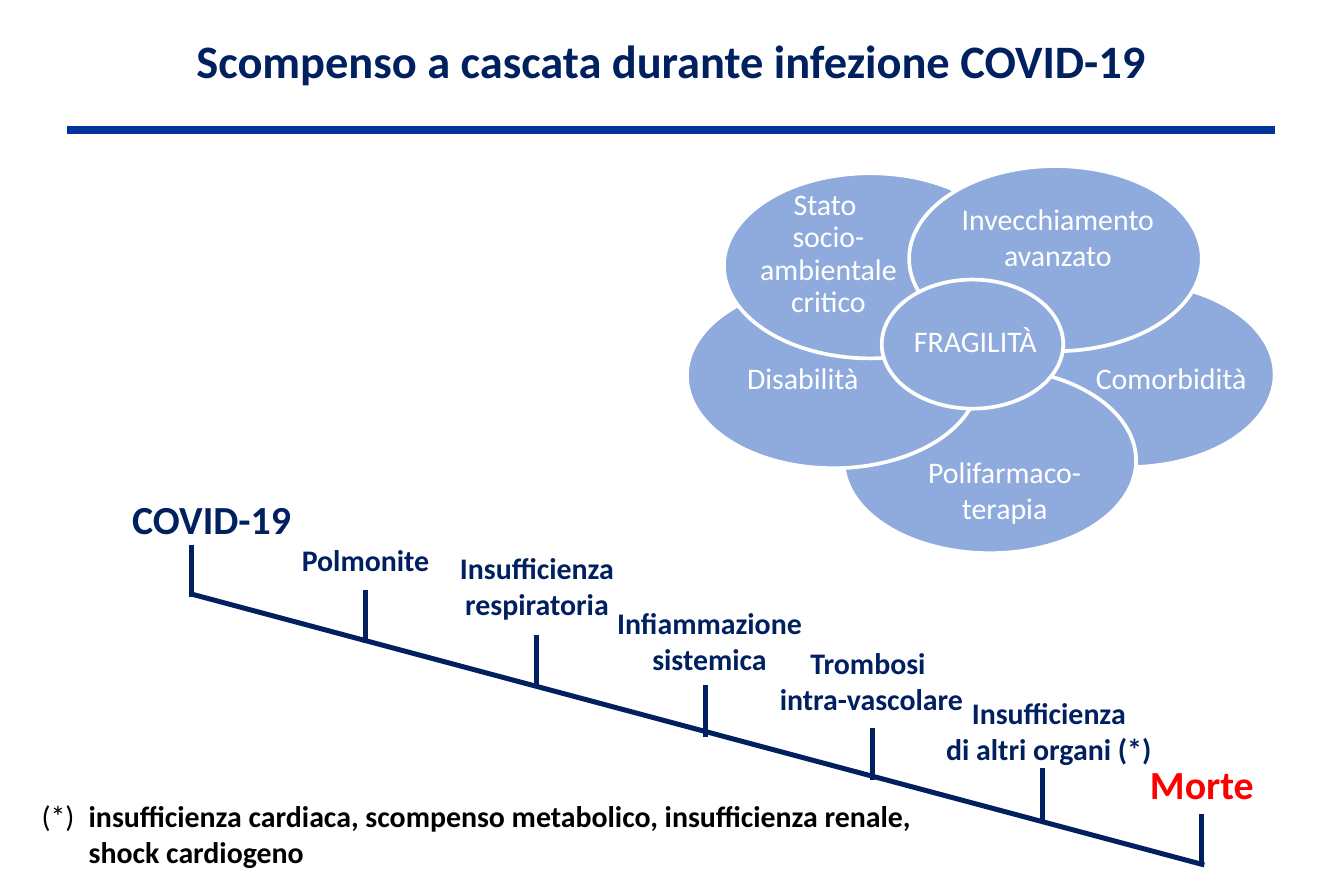
"""Build the slide on cascading decompensation during COVID-19 infection."""
import lxml.etree
import pptx
import pptx.dml.color
import pptx.enum.shapes
import pptx.enum.text
import pptx.oxml
import pptx.oxml.ns
import pptx.util

Pt = pptx.util.Pt
ALIGN = pptx.enum.text.PP_ALIGN
ANCHOR = pptx.enum.text.MSO_ANCHOR

COLORS = {"navy": "002060", "rule": "003399", "petal": "8FAADC",
          "white": "FFFFFF", "red": "FF0000", "black": "000000"}
FORMATS = {
    "title": {"size": Pt(28), "bold": True, "color": "navy"},
    "petal": {"size": Pt(18), "bold": False, "color": "white"},
    "stage": {"size": Pt(18), "bold": True, "color": "navy"},
    "start": {"size": Pt(24), "bold": True, "color": "navy"},
    "end": {"size": Pt(24), "bold": True, "color": "red"},
    "mark": {"size": Pt(18), "bold": False, "color": "black"},
    "note": {"size": Pt(18), "bold": True, "color": "black"},
}

TITLE = "Scompenso a cascata durante infezione COVID-19"
TITLE_BOX = (-0.7, 15.8, 810, 41)
RULE = (40.3, 78.5, 768.2, 78.5)

PETAL_SIZE = (176.4, 111.6)
PETALS = [(591.8, 169.9), (508.3, 221.8), (414, 170.6), (436.3, 104.4), (547.9, 100.1)]
CORE = (531.4, 168.5, 109.4, 77.8)
FACTORS = [
    (["Stato ", "socio-", "ambientale", "critico"], (415.4, 110.9, 167.8, 105.8), 0.9),
    (["Polifarmaco-", "terapia"], (543.6, 270, 123.8, 50.4), 1),
    (["Disabilità"], (400.3, 213.1, 167, 29), 1),
    (["Comorbidità"], (645.8, 213.1, 120.2, 29), 1),
    (["FRAGILITÀ"], (532.8, 190.8, 110.2, 29), 1),
    (["Invecchiamento", "avanzato"], (562.3, 117.4, 150.5, 50.4), 1),
]

SLOPE = (114.5, 357.8, 725.8, 521.3)
TICK = 31.7
STAGES = [
    (["COVID-19"], "start", (56.2, 294.5, 142.6, 36), (115.2, 328.3)),
    (["Polmonite"], "stage", (174.2, 322.6, 92.2, 29), (220.3, 355.7)),
    (["Insufficienza", "respiratoria"], "stage", (269.3, 327.6, 108.7, 51), (323.3, 383)),
    (["Infiammazione", "sistemica"], "stage", (364.3, 360.7, 126.7, 51), (425.5, 412.6)),
    (["Trombosi ", "intra-vascolare"], "stage", (462.2, 385.2, 126, 51), (525.6, 438.5)),
    (["Insufficienza", "di altri organi (*)"], "stage", (562.3, 415.4, 139.7, 51), (628.6, 463)),
    (["Morte"], "end", (685.4, 454.3, 77.8, 36), (724.3, 490.3)),
]

NOTE_MARK = "(*)"
NOTE = ["insufficienza cardiaca, scompenso metabolico, insufficienza renale,",
        "shock cardiogeno"]
NOTE_BOX = (18, 477.4, 544.3, 54)
NOTE_INDENT = 28.4

TEXT_SHADOW = (
    '<a:effectLst %s><a:outerShdw blurRad="38100" dist="38100" dir="2700000" algn="tl">'
    '<a:srgbClr val="000000"><a:alpha val="43000"/></a:srgbClr></a:outerShdw></a:effectLst>'
    % pptx.oxml.ns.nsdecls("a"))


def rgb(name):
    return pptx.dml.color.RGBColor.from_string(COLORS[name])


def add_run(p, text, style):
    r = p.add_run()
    r.text = text
    r.font.name = "Calibri"
    for key, value in FORMATS[style].items():
        if key == "color":
            r.font.color.rgb = rgb(value)
        else:
            setattr(r.font, key, value)
    if style == "petal":
        fill = r.font._element.find(pptx.oxml.ns.qn("a:solidFill"))
        fill.addnext(pptx.oxml.parse_xml(TEXT_SHADOW))
    return r


def add_label(slide, lines, style, box, spacing=1, wrap=False):
    tf = slide.shapes.add_textbox(*map(Pt, box)).text_frame
    tf.word_wrap = wrap
    for i, line in enumerate(lines):
        p = tf.add_paragraph() if i else tf.paragraphs[0]
        p.alignment = ALIGN.CENTER
        p.line_spacing = spacing
        add_run(p, line, style)


def add_ellipse(slide, box):
    sp = slide.shapes.add_shape(pptx.enum.shapes.MSO_SHAPE.OVAL, *map(Pt, box))
    sp.shadow.inherit = False
    sp.fill.solid()
    sp.fill.fore_color.rgb = rgb("petal")
    sp.line.color.rgb = rgb("white")
    sp.line.width = Pt(2.25)


def add_line(slide, ends, color, width):
    line = slide.shapes.add_connector(pptx.enum.shapes.MSO_CONNECTOR.STRAIGHT, *map(Pt, ends))
    line.line.color.rgb = rgb(color)
    line.line.width = Pt(width)
    lxml.etree.SubElement(line._element.spPr, pptx.oxml.ns.qn("a:effectLst"))


def add_title(slide):
    title = slide.shapes.title
    title.left, title.top, title.width, title.height = map(Pt, TITLE_BOX)
    tf = title.text_frame
    tf.auto_size = pptx.enum.text.MSO_AUTO_SIZE.NONE
    tf.vertical_anchor = ANCHOR.MIDDLE
    tf.paragraphs[0].alignment = ALIGN.CENTER
    add_run(tf.paragraphs[0], TITLE, "title")


def add_note(slide):
    tf = slide.shapes.add_textbox(*map(Pt, NOTE_BOX)).text_frame
    tf.word_wrap = False
    p = tf.paragraphs[0]
    pPr = p._p.get_or_add_pPr()
    pPr.set("marL", str(int(Pt(NOTE_INDENT))))
    pPr.set("indent", str(-int(Pt(NOTE_INDENT))))
    add_run(p, NOTE_MARK + "\t", "mark")
    add_run(p, NOTE[0], "note")
    p.add_line_break()
    add_run(p, NOTE[1], "note")


def main():
    prs = pptx.Presentation()
    prs.slide_width, prs.slide_height = Pt(810), Pt(540)
    slide = prs.slides.add_slide(prs.slide_layouts[5])
    add_title(slide)
    add_line(slide, RULE, "rule", 4.5)
    for corner in PETALS:
        add_ellipse(slide, corner + PETAL_SIZE)
    add_ellipse(slide, CORE)
    for lines, box, spacing in FACTORS:
        add_label(slide, lines, "petal", box, spacing)
    add_note(slide)
    add_line(slide, SLOPE, "navy", 3)
    for lines, style, box, (x, top) in STAGES:
        add_line(slide, (x, top, x, top + TICK), "navy", 3)
        add_label(slide, lines, style, box)
    prs.save("out.pptx")


if __name__ == "__main__":
    main()
